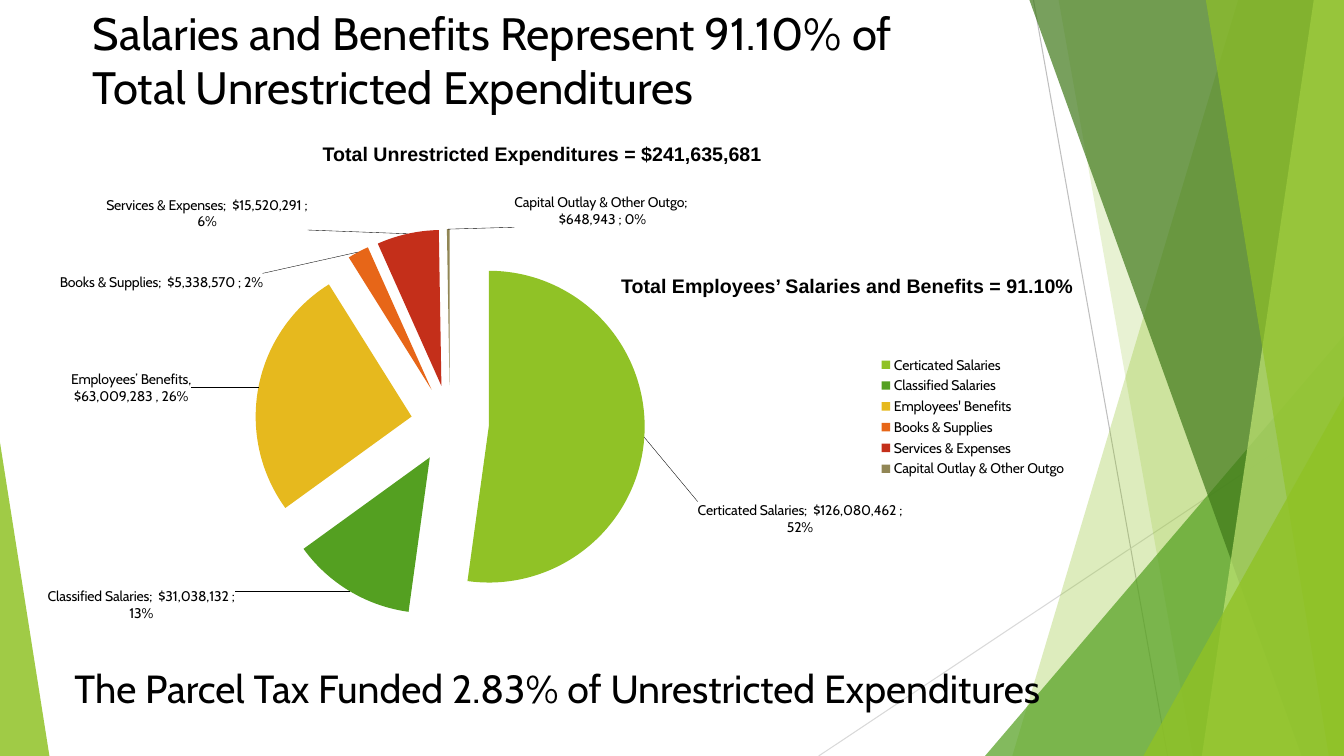
from dataclasses import dataclass

from lxml import etree
from pptx import Presentation
from pptx.chart.data import CategoryChartData
from pptx.dml.color import RGBColor
from pptx.enum.chart import XL_CHART_TYPE, XL_LEGEND_POSITION
from pptx.enum.shapes import MSO_CONNECTOR, MSO_SHAPE
from pptx.enum.text import MSO_ANCHOR, PP_ALIGN
from pptx.oxml import parse_xml
from pptx.oxml.ns import nsdecls, qn
from pptx.util import Inches, Pt

PIE = XL_CHART_TYPE.PIE
RIGHT = XL_LEGEND_POSITION.RIGHT
STRAIGHT = MSO_CONNECTOR.STRAIGHT
TRIANGLE = MSO_SHAPE.ISOSCELES_TRIANGLE
TOP = MSO_ANCHOR.TOP
LEFT = PP_ALIGN.LEFT

WIDTH, HEIGHT = 13.33, 7.5
CHART_BOX = (0.23, 1.73, 10.45, 4.81)
COLORS = {
    "black": "000000", "white": "FFFFFF", "lime": "90C226", "green": "54A021",
    "forest": "3F7819", "pale": "C0E474", "gold": "E6B91E", "orange": "E76618",
    "red": "C42F1A", "olive": "918655", "gray": "BFBFBF", "silver": "D9D9D9",
}


@dataclass
class Ray:
    start: tuple[float, float]
    end: tuple[float, float]
    color: str


@dataclass
class Band:
    """Facet reaching the right edge; its left side runs from top to bottom."""
    top: float
    bottom: float
    color: str
    opacity: int


@dataclass
class Wedge:
    box: tuple[float, float, float, float]
    apex: float
    color: str
    opacity: int


@dataclass
class Caption:
    text: str
    box: tuple[float, float, float, float]
    font: dict
    insets: tuple[float, float, float, float]
    wrap: bool = True
    fill: str = ""


@dataclass
class Slice:
    category: str
    amount: int
    color: str
    shift: tuple[float, float]  # label offset from its usual place, in inches
    text: str = ""


BACKDROP = [
    Ray((10.25, 0), (11.58, 7.5), "gray"),
    Ray((13.33, 4.03), (8.12, 7.5), "silver"),
    Band(12.28, 10.04, "lime", 30),
    Band(10.5, 11.83, "lime", 20),
    Wedge((9.77, 3.33, 3.56, 4.17), 1, "green", 72),
    Band(10.21, 12.91, "forest", 70),
    Band(13.03, 11.92, "pale", 70),
    Band(11.96, 13.18, "lime", 65),
    Wedge((11.34, 3.93, 1.99, 3.57), 1, "lime", 80),
    Wedge((0, 4.39, 0.49, 3.11), 0, "lime", 85),
]
TITLE_FONT = {"name": "Cabin", "size": Pt(32.4), "bold": False}
FOOT_FONT = {"name": "Cabin", "size": Pt(28), "bold": False}
NOTE_FONT = {"name": "Arial", "size": Pt(14), "bold": True}
CHART_FONT = {"name": "Cabin", "size": Pt(10), "bold": False}
WIDE_INSETS = (0.1, 0.05, 0.1, 0.05)
NOTE_INSETS = (0.03, 0.03, 0, 0)

TITLE = Caption("Salaries and Benefits Represent 91.10% of\vTotal Unrestricted Expenditures",
                (0.82, 0, 9.4, 1.44), TITLE_FONT, WIDE_INSETS)
FOOT = Caption("The Parcel Tax Funded 2.83% of Unrestricted Expenditures",
               (0.64, 6.54, 11.15, 0.57), FOOT_FONT, WIDE_INSETS)
TOTAL = Caption("Total Unrestricted Expenditures = $241,635,681",
                (3.17, 1.38, 4.4, 0.27), NOTE_FONT, NOTE_INSETS, False, "white")
SHARE = Caption("Total Employees’ Salaries and Benefits = 91.10%",
                (6.13, 2.69, 4.55, 0.27), NOTE_FONT, NOTE_INSETS)
SLICES = [
    Slice("Certicated Salaries", 126080462, "lime", (0.47, 0.8)),
    Slice("Classified Salaries", 31038132, "green", (-1.11, -0.08)),
    Slice("Employees' Benefits", 63009283, "gold", (-0.61, 0.19),
          "Employees’ Benefits, $63,009,283 , 26%"),
    Slice("Books & Supplies", 5338570, "orange", (-0.92, 0.43)),
    Slice("Services & Expenses", 15520291, "red", (-0.98, 0.02)),
    Slice("Capital Outlay & Other Outgo", 648943, "olive", (1.53, 0.04)),
]


def rgb(color: str) -> RGBColor:
    return RGBColor.from_string(COLORS[color])


def set_font(font, values: dict) -> None:
    for name, value in values.items():
        setattr(font, name, value)
    font.color.rgb = rgb("black")


def paint(shape, color: str, opacity: int) -> None:
    shape.shadow.inherit = False
    shape.line.fill.background()
    shape.fill.solid()
    shape.fill.fore_color.rgb = rgb(color)
    tint = shape._element.spPr.find(qn("a:solidFill"))[0]
    etree.SubElement(tint, qn("a:alpha")).set("val", str(opacity * 1000))


def draw_ray(page, ray: Ray) -> None:
    line = page.shapes.add_connector(STRAIGHT, *map(Inches, ray.start + ray.end))
    line.line.color.rgb = rgb(ray.color)
    line.line.width = Pt(0.75)
    etree.SubElement(line._element.spPr, qn("a:effectLst"))


def draw_band(page, band: Band) -> None:
    builder = page.shapes.build_freeform(Inches(band.top), 0)
    corners = [(WIDTH, 0), (WIDTH, HEIGHT), (band.bottom, HEIGHT)]
    builder.add_line_segments([(Inches(x), Inches(y)) for x, y in corners])
    paint(builder.convert_to_shape(), band.color, band.opacity)


def draw_wedge(page, wedge: Wedge) -> None:
    shape = page.shapes.add_shape(TRIANGLE, *map(Inches, wedge.box))
    shape.adjustments[0] = wedge.apex
    paint(shape, wedge.color, wedge.opacity)


def write_caption(box, caption: Caption) -> None:
    sides = zip(("left", "top", "width", "height"), caption.box)
    for side, length in sides:
        setattr(box, side, Inches(length))
    frame = box.text_frame
    for side, length in zip(("left", "top", "right", "bottom"), caption.insets):
        setattr(frame, f"margin_{side}", Inches(length))
    frame.word_wrap = caption.wrap
    frame.vertical_anchor = TOP
    para = frame.paragraphs[0]
    para.text = caption.text
    para.alignment = LEFT
    for span in para.runs:
        set_font(span.font, caption.font)
    if caption.fill:
        box.fill.solid()
        box.fill.fore_color.rgb = rgb(caption.fill)


def add_caption(page, caption: Caption) -> None:
    write_caption(page.shapes.add_textbox(*map(Inches, caption.box)), caption)


def layout_xml(inner: str) -> str:
    return f"<c:layout><c:manualLayout>{inner}</c:manualLayout></c:layout>"


def labels_xml(slices: list[Slice]) -> str:
    shown = ('<c:dLblPos val="outEnd"/><c:showLegendKey val="0"/><c:showVal val="1"/>'
             '<c:showCatName val="1"/><c:showSerName val="0"/><c:showPercent val="1"/>'
             '<c:showBubbleSize val="0"/><c:separator>; </c:separator>')
    number = '<c:numFmt formatCode="0%" sourceLinked="0"/>'
    labels = ""
    for index, part in enumerate(slices):
        x, y = part.shift[0] / CHART_BOX[2], part.shift[1] / CHART_BOX[3]
        place = layout_xml(f'<c:x val="{x:.4f}"/><c:y val="{y:.4f}"/>')
        text = (f'<c:tx><c:rich><a:bodyPr/><a:p><a:r><a:rPr lang="en-US" sz="1000"/>'
                f'<a:t>{part.text}</a:t></a:r></a:p></c:rich></c:tx>') if part.text else ""
        labels += f'<c:dLbl><c:idx val="{index}"/>{place}{text}{number}{shown}</c:dLbl>'
    leader = ('<c:showLeaderLines val="1"/><c:leaderLines><c:spPr><a:ln w="3175"><a:solidFill>'
              f'<a:srgbClr val="{COLORS["black"]}"/></a:solidFill></a:ln></c:spPr></c:leaderLines>')
    return f'<c:dLbls {nsdecls("c", "a")}>{labels}{number}{shown}{leader}</c:dLbls>'


def add_pie(page, slices: list[Slice]) -> None:
    data = CategoryChartData(number_format='_("$"* #,##0_)')
    data.categories = [part.category for part in slices]
    data.add_series("Series 1", [part.amount for part in slices])
    chart = page.shapes.add_chart(PIE, *map(Inches, CHART_BOX), data).chart
    chart.has_title = False
    set_font(chart.font, CHART_FONT)
    chart.has_legend = True
    chart.legend.position = RIGHT
    chart.legend.include_in_layout = False
    chart.plots[0].vary_by_categories = True
    series = chart.plots[0].series[0]
    for index, part in enumerate(slices):
        fill = series.points[index].format.fill
        fill.solid()
        fill.fore_color.rgb = rgb(part.color)

    # Pulled-out slices and their labels
    element = series._element
    explosion = parse_xml(f'<c:explosion {nsdecls("c")} val="25"/>')
    element.find(qn("c:dPt")).addprevious(explosion)
    element.find(qn("c:cat")).addprevious(parse_xml(labels_xml(slices)))

    # Place of the pie within the chart
    area = chart._chartSpace.chart.plotArea
    for old in area.findall(qn("c:layout")):
        area.remove(old)
    frame = ('<c:layoutTarget val="inner"/><c:xMode val="edge"/><c:yMode val="edge"/>'
             '<c:x val="0.22"/><c:y val="0.11"/><c:w val="0.37"/><c:h val="0.81"/>')
    area.insert(0, parse_xml(layout_xml(frame).replace("<c:layout>", f'<c:layout {nsdecls("c")}>')))


def main() -> None:
    deck = Presentation()
    deck.slide_width, deck.slide_height = Inches(WIDTH), Inches(HEIGHT)
    page = deck.slides.add_slide(deck.slide_layouts[5])
    # Backdrop
    painters = {Ray: draw_ray, Band: draw_band, Wedge: draw_wedge}
    for item in BACKDROP:
        painters[type(item)](page, item)
    # Title in front of the backdrop
    title = page.shapes.title
    page.shapes._spTree.append(title._element)
    write_caption(title, TITLE)
    # Captions and chart
    add_caption(page, FOOT)
    add_caption(page, TOTAL)
    add_pie(page, SLICES)
    add_caption(page, SHARE)
    deck.save("out.pptx")


if __name__ == "__main__":
    main()
